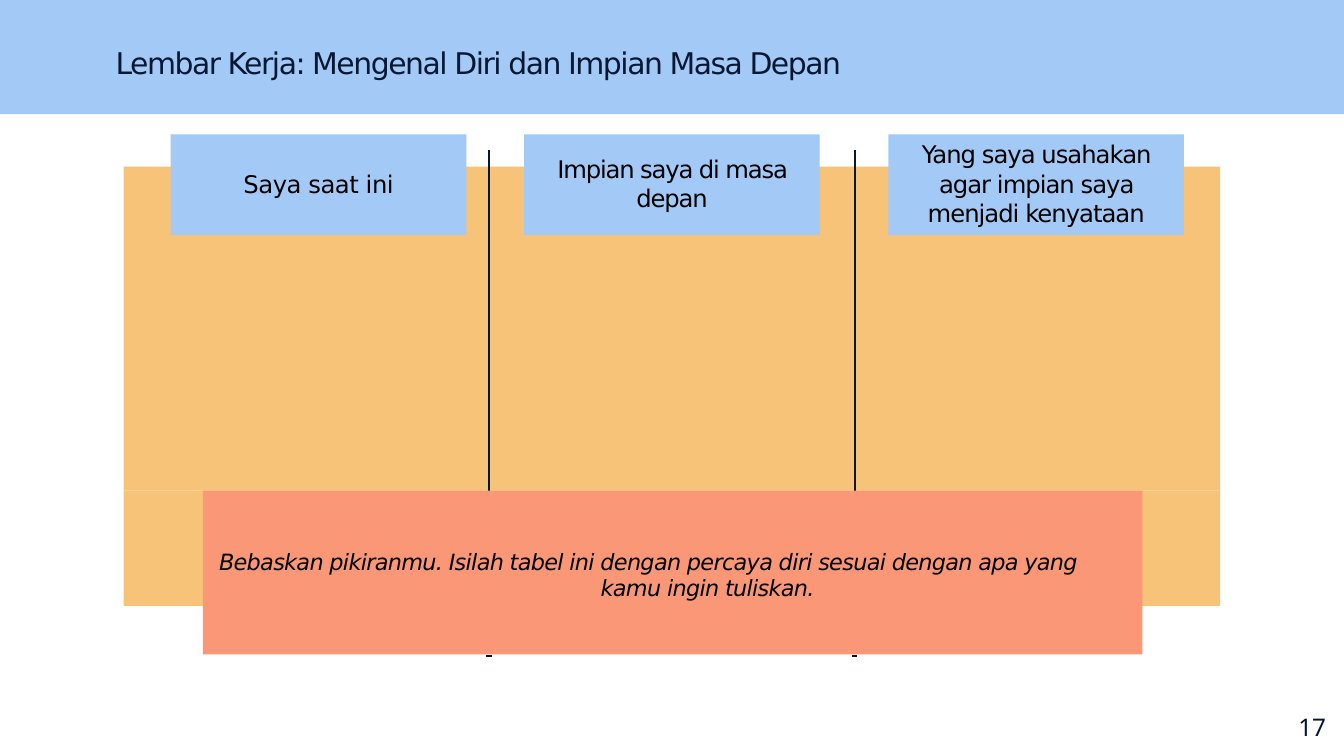
from lxml import etree
from pptx import Presentation
from pptx.dml.color import RGBColor
from pptx.enum.shapes import MSO_CONNECTOR as CONN, MSO_SHAPE as SHAPE
from pptx.enum.text import MSO_ANCHOR as ANCHOR, PP_ALIGN as ALIGN
from pptx.oxml.ns import qn
from pptx.util import Inches, Pt

COLORS = {
    "blue": "A3CAF6",
    "orange": "F7C379",
    "coral": "F99777",
    "navy": "041834",
    "black": "000000",
}
HEADINGS = [
    (0.35, "Saya saat ini", -0.24),
    (2.98, "Impian saya di masa depan", -0.6),
    (5.69, "Yang saya usahakan agar impian saya menjadi kenyataan", -0.5),
]


def rgb(name):
    """Return the named palette colour."""
    return RGBColor.from_string(COLORS[name])


def add_rect(s, x, y, w, h, color):
    """Add a plain filled rectangle."""
    sp = s.shapes.add_shape(SHAPE.RECTANGLE, Inches(x), Inches(y), Inches(w), Inches(h))
    sp.shadow.inherit = False
    sp.fill.solid()
    sp.fill.fore_color.rgb = rgb(color)
    sp.line.fill.background()
    return sp


def add_line(s, x1, y1, x2, y2):
    """Add a thin navy line."""
    ln = s.shapes.add_connector(CONN.STRAIGHT, Inches(x1), Inches(y1), Inches(x2), Inches(y2))
    ln.line.color.rgb = rgb("navy")
    ln.line.width = Pt(0.97)
    etree.SubElement(ln._element.spPr, qn("a:effectLst"))


def add_textbox(s, x, y, w, h):
    """Add an empty text box."""
    return s.shapes.add_textbox(Inches(x), Inches(y), Inches(w), Inches(h))


def set_text(sp, text, size=13, font="DejaVu Sans", color="black", align=ALIGN.LEFT,
             italic=False, spacing=0, leading=None, inset=0, top=0, bottom=0):
    """Write one formatted paragraph into a shape and return it."""
    tf = sp.text_frame
    tf.word_wrap = True
    tf.vertical_anchor = ANCHOR.MIDDLE
    tf.margin_left = tf.margin_right = Inches(inset)
    tf.margin_top, tf.margin_bottom = Inches(top), Inches(bottom)
    p = tf.paragraphs[0]
    p.alignment = align
    p.line_spacing = leading
    r = p.add_run()
    r.text = text
    r.font.size = Pt(size)
    r.font.name = font
    r.font.italic = italic
    r.font.color.rgb = rgb(color)
    r._r.get_or_add_rPr().set("spc", str(round(spacing * 100)))
    return p


def add_header(s, x, y, w, h):
    """Draw the title band."""
    add_rect(s, x, y, w, h, "blue")
    title = add_textbox(s, x + 0.86, y + 0.32, 5.6, 0.29)
    set_text(title, "Lembar Kerja: Mengenal Diri dan Impian Masa Depan",
             size=16, color="navy", spacing=-0.76)


def add_worksheet(s, x, y, w, h):
    """Draw the three-column worksheet with its headings."""
    upper = 2.41
    add_rect(s, x, y + upper, w, h - upper, "orange")
    add_rect(s, x, y, w, upper, "orange")
    for i in (1, 2):
        cx = x + i * w / 3
        add_line(s, cx, y - 0.12, cx, y + upper)
        add_line(s, cx - 0.02, y + 3.64, cx + 0.02, y + 3.64)
    for dx, text, spacing in HEADINGS:
        head = add_rect(s, x + dx, y - 0.24, 2.2, 0.75, "blue")
        set_text(head, text, align=ALIGN.CENTER, spacing=spacing, leading=1.01,
                 inset=0.1, bottom=0.02)


def add_prompt(s, x, y, w, h):
    """Draw the encouragement banner with a hanging first line."""
    sp = add_rect(s, x, y, w, h, "coral")
    p = set_text(sp, "Bebaskan pikiranmu. Isilah tabel ini dengan percaya diri sesuai "
                 "dengan apa yang kamu ingin tuliskan.",
                 size=12, italic=True, spacing=-0.36, leading=Pt(14.2), top=0.03)
    sp.text_frame.margin_right = Inches(0.25)
    pPr = p._p.get_or_add_pPr()
    pPr.set("marL", str(Inches(2.96)))
    pPr.set("indent", str(Inches(-2.84)))


def add_page_number(s, x, y, w, h):
    """Write the page number."""
    set_text(add_textbox(s, x, y, w, h), "17", font="Noto Sans", color="navy", inset=0.04)


def main():
    """Build and save the slide."""
    prs = Presentation()
    prs.slide_width = Inches(10)
    prs.slide_height = prs.slide_width * 9 // 16
    s = prs.slides.add_slide(prs.slide_layouts[6])
    add_header(s, 0, 0, 10, 0.85)
    add_worksheet(s, 0.92, 1.24, 8.16, 3.27)
    add_prompt(s, 1.51, 3.65, 6.99, 1.22)
    add_page_number(s, 9.62, 5.27, 0.29, 0.27)
    prs.save("out.pptx")


if __name__ == "__main__":
    main()
